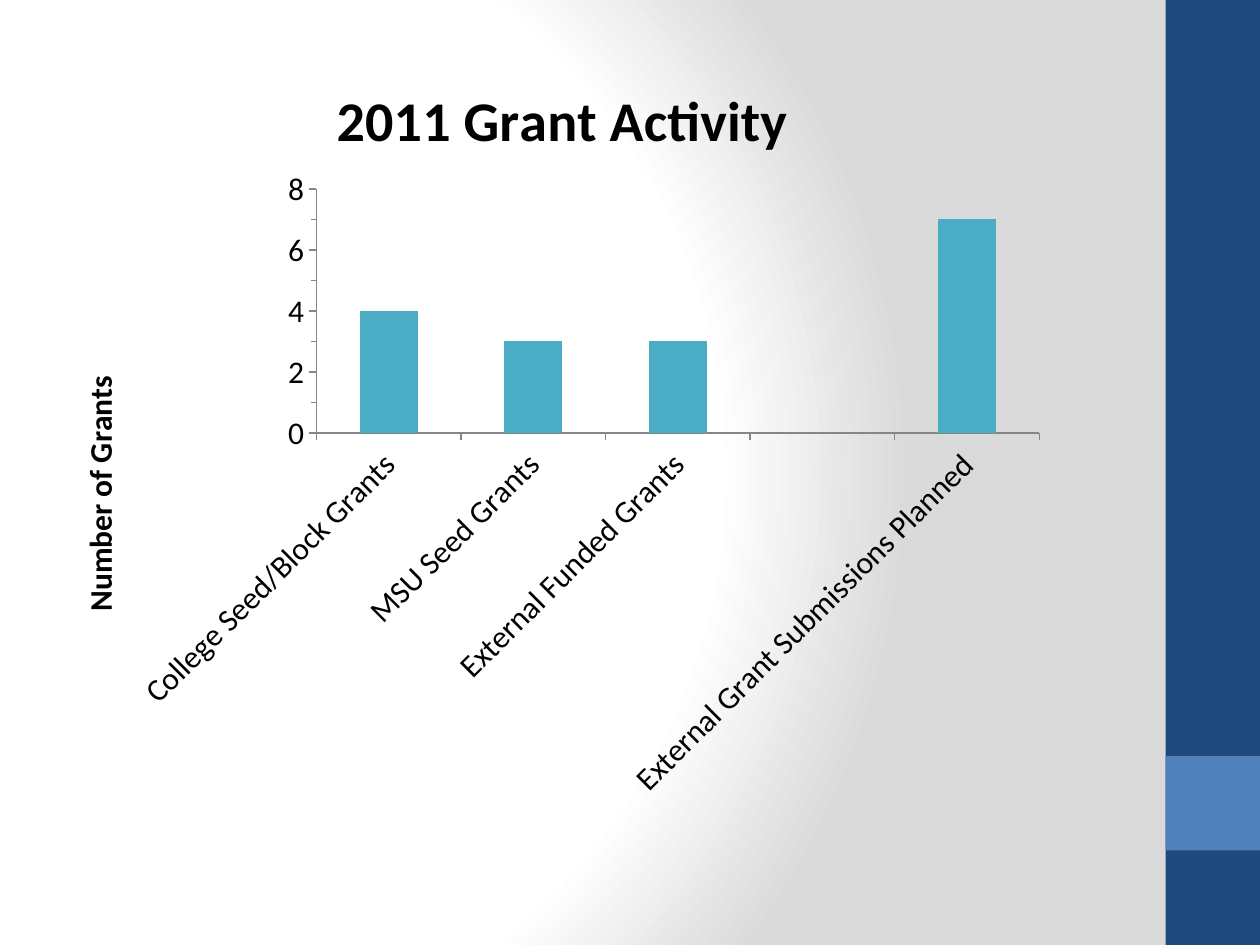
"""Builds the 2011 grant activity slide with its column chart."""
import pptx
import pptx.chart.data
import pptx.dml.color
import pptx.enum.chart
import pptx.enum.shapes
import pptx.oxml
import pptx.oxml.ns
import pptx.util
from pptx.util import Inches

NAVY = pptx.dml.color.RGBColor(0x1F, 0x49, 0x7D)
BLUE = pptx.dml.color.RGBColor(0x4F, 0x81, 0xBD)
TEAL = pptx.dml.color.RGBColor(0x4B, 0xAC, 0xC6)
GRAY = pptx.dml.color.RGBColor(0x86, 0x86, 0x86)
BLACK = pptx.dml.color.RGBColor(0, 0, 0)

BACKGROUND = f"""<p:bg {pptx.oxml.ns.nsdecls("p", "a")}><p:bgPr>
<a:gradFill rotWithShape="1"><a:gsLst>
<a:gs pos="0"><a:srgbClr val="FFFFFF"/></a:gs>
<a:gs pos="75000"><a:srgbClr val="FFFFFF"/></a:gs>
<a:gs pos="100000"><a:srgbClr val="DADADA"/></a:gs>
</a:gsLst><a:path path="circle">
<a:fillToRect l="20000" t="50000" r="100000" b="50000"/>
</a:path></a:gradFill><a:effectLst/></p:bgPr></p:bg>"""


def place(element, after, **position):
    """Give a chart part a manual layout, as fractions of the chart."""
    for old in element.findall(pptx.oxml.ns.qn("c:layout")):
        element.remove(old)
    inner = '<c:layoutTarget val="inner"/>' if "w" in position else ""
    modes = "".join(f'<c:{key}Mode val="edge"/>' for key in "xy")
    values = "".join(f'<c:{key} val="{value}"/>' for key, value in position.items())
    layout = pptx.oxml.parse_xml(
        f'<c:layout {pptx.oxml.ns.nsdecls("c")}><c:manualLayout>'
        f"{inner}{modes}{values}</c:manualLayout></c:layout>"
    )
    element.insert(after, layout)


def write_title(owner, text, size, **position):
    """Set a bold title on a chart or an axis and position it."""
    title = owner.chart_title if hasattr(owner, "chart_title") else owner.axis_title
    title.text_frame.text = text
    font = title.text_frame.paragraphs[0].runs[0].font
    font.name = "Calibri"
    font.size = pptx.util.Pt(size)
    font.bold = True
    font.color.rgb = BLACK
    place(title._element, 1, **position)
    return title


presentation = pptx.Presentation()
presentation.slide_width = Inches(10)
presentation.slide_height = Inches(7.5)
slide = presentation.slides.add_slide(presentation.slide_layouts[6])
slide._element.cSld.insert(0, pptx.oxml.parse_xml(BACKGROUND))

for top, height, color in [(0, 7.5, NAVY), (6, 0.75, BLUE)]:
    band = slide.shapes.add_shape(
        pptx.enum.shapes.MSO_SHAPE.RECTANGLE,
        Inches(9.25), Inches(top), Inches(0.75), Inches(height),
    )
    band.shadow.inherit = False
    band.fill.solid()
    band.fill.fore_color.rgb = color
    band.line.fill.background()

grants = pptx.chart.data.CategoryChartData()
grants.categories = [
    "College Seed/Block Grants",
    "MSU Seed Grants",
    "External Funded Grants",
    "",
    "External Grant Submissions Planned",
]
grants.add_series("Series 1", [4, 3, 3, None, 7])
chart = slide.shapes.add_chart(
    pptx.enum.chart.XL_CHART_TYPE.COLUMN_CLUSTERED,
    Inches(0.33), Inches(0.25), Inches(8.08), Inches(6.25), grants,
).chart
chart.has_legend = False
chart.font.name = "Calibri"
chart.font.size = pptx.util.Pt(18)
chart.font.color.rgb = BLACK

columns = chart.plots[0]
columns.gap_width = 150
columns.vary_by_categories = False
columns.series[0].format.fill.solid()
columns.series[0].format.fill.fore_color.rgb = TEAL

for axis in (chart.category_axis, chart.value_axis):
    axis.has_major_gridlines = False
    axis.major_tick_mark = pptx.enum.chart.XL_TICK_MARK.OUTSIDE
    axis.format.line.color.rgb = GRAY
    axis.format.line.width = pptx.util.Pt(0.75)

chart.category_axis.tick_labels.font.size = pptx.util.Pt(18)
label_body = chart.category_axis._element.find(pptx.oxml.ns.qn("c:txPr")).bodyPr
label_body.set("rot", "-2700000")
label_body.set("vert", "horz")

grant_count = chart.value_axis
grant_count.minimum_scale = 0
grant_count.maximum_scale = 8
grant_count.major_unit = 2
grant_count.minor_unit = 1
grant_count.minor_tick_mark = pptx.enum.chart.XL_TICK_MARK.OUTSIDE

heading = write_title(chart, "2011 Grant Activity", 32, x=0.28, y=0.05)
heading.include_in_layout = True if hasattr(heading, "include_in_layout") else None
count_title = write_title(grant_count, "Number of Grants", 18, x=0.03, y=0.43)
count_title.text_frame._txBody.bodyPr.set("rot", "-5400000")
count_title.text_frame._txBody.bodyPr.set("vert", "horz")
place(chart._chartSpace.chart.plotArea, 0, x=0.27, y=0.2, w=0.71, h=0.31)

presentation.save("out.pptx")
